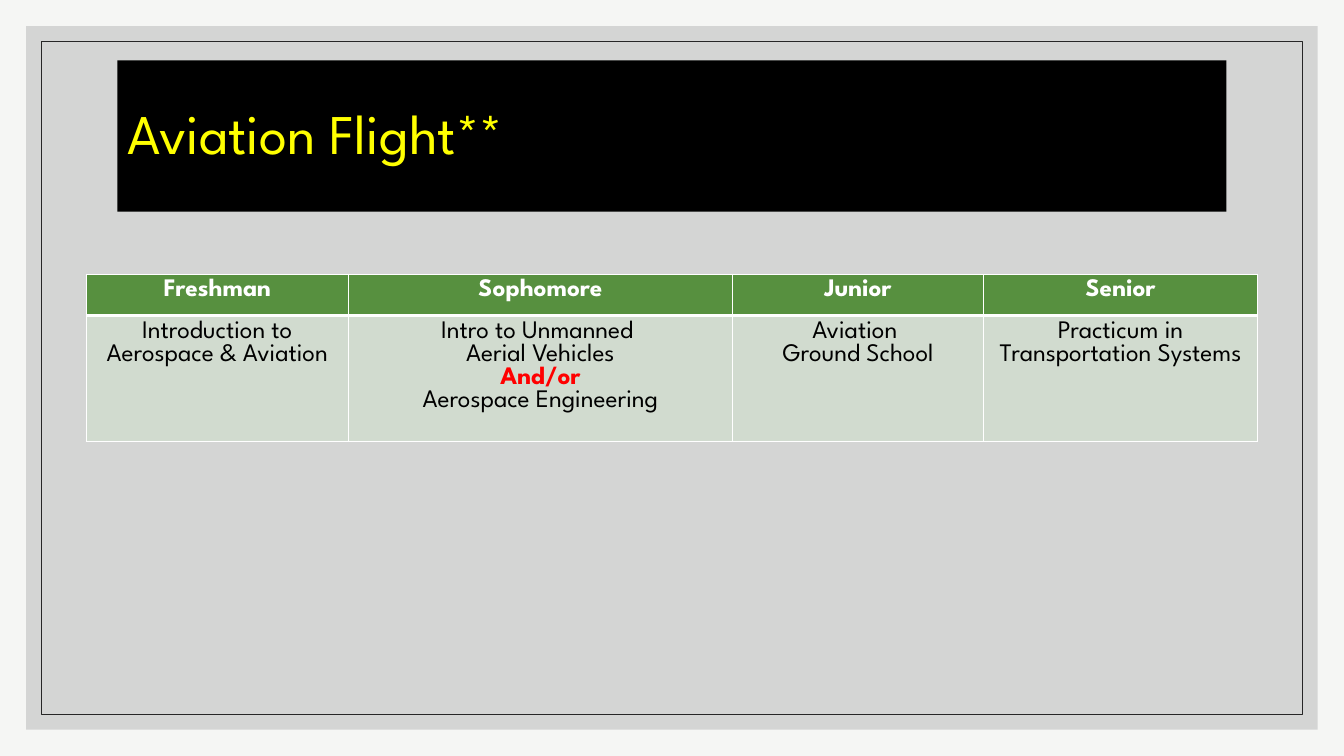
from lxml.etree import SubElement
from pptx import Presentation
from pptx.dml.color import RGBColor
from pptx.enum.shapes import MSO_SHAPE as Shape
from pptx.enum.text import MSO_ANCHOR as Anchor, PP_ALIGN as Align
from pptx.oxml.ns import qn
from pptx.util import Inches, Pt

# Content
TITLE = "Aviation Flight**"
JOINER = "And/or"
COURSES = {
    "Freshman": ["Introduction to Aerospace & Aviation"],
    "Sophomore": ["Intro to Unmanned ", "Aerial Vehicles", JOINER,
                  "Aerospace Engineering"],
    "Junior": ["Aviation ", "Ground School"],
    "Senior": ["Practicum in Transportation Systems"],
}

# Format
FONT = "League Spartan"
PAPER = RGBColor(0xF5, 0xF6, 0xF4)
PANEL = RGBColor(0xBF, 0xBF, 0xBF)
FRAME = RGBColor(0x26, 0x26, 0x26)
BLACK = RGBColor(0, 0, 0)
WHITE = RGBColor(0xFF, 0xFF, 0xFF)
YELLOW = RGBColor(0xFF, 0xFF, 0)
RED = RGBColor(0xFF, 0, 0)
GREEN = RGBColor(0x57, 0x90, 0x3F)
PALE_GREEN = RGBColor(0xD1, 0xDB, 0xCF)

TITLE_FONT = {"size": Pt(40), "bold": False}
HEADER_FONT = {"size": Pt(18), "bold": True}
BODY_FONT = {"size": Pt(18), "bold": False}

# Layout in inches
WIDTH, HEIGHT = 13.33, 7.5
PANEL_INSET, FRAME_INSET = 0.26, 0.41
TITLE_WIDTH, TITLE_TOP, TITLE_HEIGHT = 11, 0.6, 1.5
TABLE_TOP = 2.72
COLUMNS = [2.6, 3.81, 2.49, 2.72]
ROWS = [0.41, 1.25]


def add_rectangle(slide, left, top, width, height, fill=None, line=None):
    shape = slide.shapes.add_shape(
        Shape.RECTANGLE, *map(Inches, (left, top, width, height)))
    shape.shadow.inherit = False
    if fill is None:
        shape.fill.background()
    else:
        shape.fill.solid()
        shape.fill.fore_color.rgb = fill
    if line is None:
        shape.line.fill.background()
    else:
        shape.line.color.rgb = line
        shape.line.width = Pt(0.5)
    return shape


def add_inset(slide, inset, **colors):
    return add_rectangle(slide, inset, inset, WIDTH - 2 * inset,
                         HEIGHT - 2 * inset, **colors)


def write(frame, lines, align, color, font_format):
    for index, line in enumerate(lines):
        paragraph = frame.paragraphs[0] if index == 0 else frame.add_paragraph()
        paragraph.alignment = align
        run = paragraph.add_run()
        run.text = line
        run.font.name = FONT
        for name, value in font_format.items():
            setattr(run.font, name, value)
        run.font.color.rgb = color
        if line == JOINER:
            run.font.bold = True
            run.font.color.rgb = RED


def style_cell(cell, fill, bottom_width):
    properties = cell._tc.get_or_add_tcPr()
    for side in "LRTB":
        width = bottom_width if side == "B" else 1
        border = SubElement(properties, qn(f"a:ln{side}"), w=str(Pt(width)))
        solid = SubElement(border, qn("a:solidFill"))
        SubElement(solid, qn("a:srgbClr"), val=str(WHITE))
    cell.fill.solid()
    cell.fill.fore_color.rgb = fill


def main():
    presentation = Presentation()
    presentation.slide_width = Inches(WIDTH)
    presentation.slide_height = Inches(HEIGHT)
    slide = presentation.slides.add_slide(presentation.slide_layouts[6])
    slide.background.fill.solid()
    slide.background.fill.fore_color.rgb = PAPER

    # Translucent panel and thin frame
    panel = add_inset(slide, PANEL_INSET, fill=PANEL)
    panel_color = panel._element.spPr.find(qn("a:solidFill"))[0]
    SubElement(panel_color, qn("a:alpha"), val="60000")
    add_inset(slide, FRAME_INSET, line=FRAME)

    # Title bar
    title = add_rectangle(slide, (WIDTH - TITLE_WIDTH) / 2, TITLE_TOP,
                          TITLE_WIDTH, TITLE_HEIGHT, fill=BLACK)
    title.text_frame.word_wrap = True
    title.text_frame.vertical_anchor = Anchor.MIDDLE
    write(title.text_frame, [TITLE], Align.LEFT, YELLOW, TITLE_FONT)
    title.text_frame.paragraphs[0].line_spacing = 0.9

    # Course table
    table_width = sum(COLUMNS)
    table = slide.shapes.add_table(
        len(ROWS), len(COLUMNS), Inches((WIDTH - table_width) / 2),
        Inches(TABLE_TOP), Inches(table_width), Inches(sum(ROWS))).table
    for row, height in zip(table.rows, ROWS):
        row.height = Inches(height)
    for index, (year, courses) in enumerate(COURSES.items()):
        table.columns[index].width = Inches(COLUMNS[index])
        header, body = table.cell(0, index), table.cell(1, index)
        style_cell(header, GREEN, 3)
        write(header.text_frame, [year], Align.CENTER, WHITE, HEADER_FONT)
        style_cell(body, PALE_GREEN, 1)
        write(body.text_frame, courses, Align.CENTER, BLACK, BODY_FONT)

    presentation.save("out.pptx")


if __name__ == "__main__":
    main()
